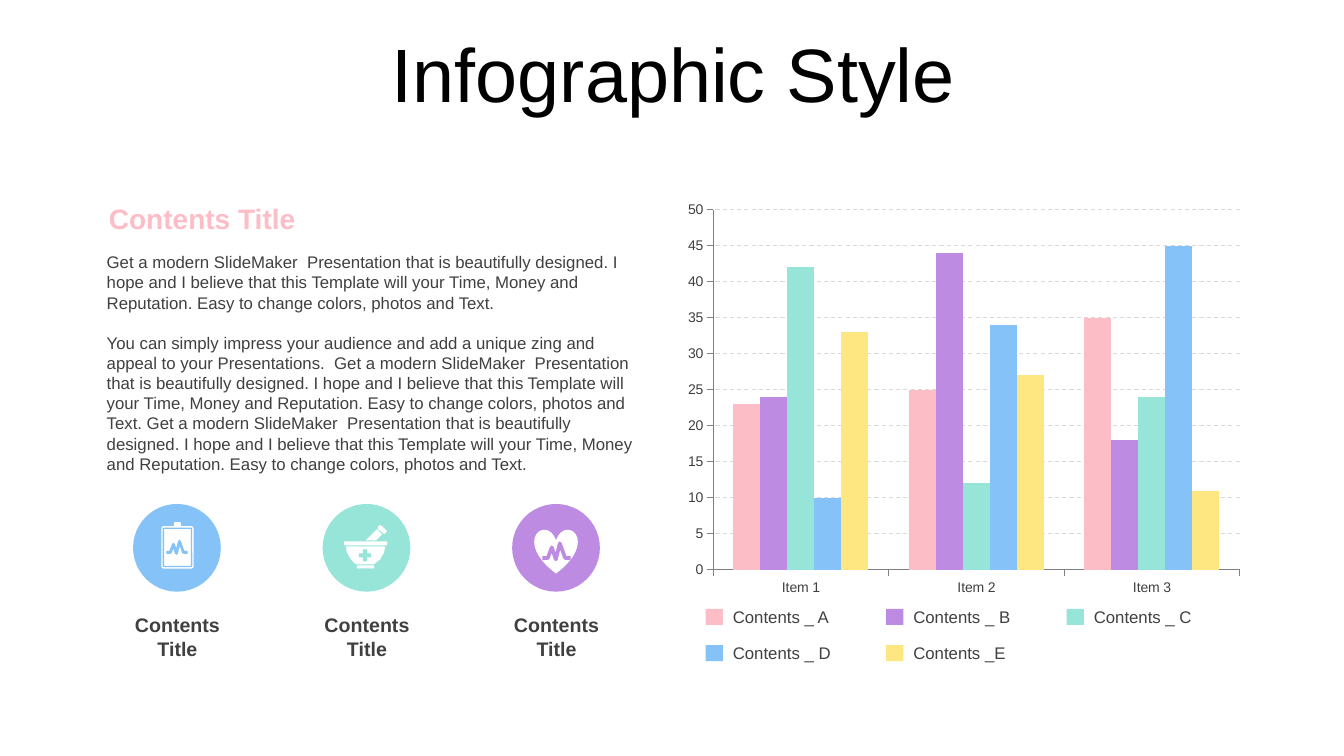
from pptx import Presentation
from pptx.chart.data import CategoryChartData
from pptx.dml.color import RGBColor
from pptx.enum.chart import XL_CHART_TYPE, XL_TICK_MARK
from pptx.enum.dml import MSO_LINE
from pptx.enum.shapes import MSO_SHAPE
from pptx.enum.text import MSO_ANCHOR, PP_ALIGN
from pptx.util import Inches, Pt

BLACK = RGBColor(0x00, 0x00, 0x00)
WHITE = RGBColor(0xFF, 0xFF, 0xFF)
DARK = RGBColor(0x40, 0x40, 0x40)
AXIS = RGBColor(0x80, 0x80, 0x80)
GRID = RGBColor(0xD9, 0xD9, 0xD9)
PINK = RGBColor(0xFD, 0xBD, 0xC7)
PURPLE = RGBColor(0xBE, 0x8B, 0xE2)
MINT = RGBColor(0x96, 0xE5, 0xD8)
BLUE = RGBColor(0x85, 0xC2, 0xF8)
YELLOW = RGBColor(0xFE, 0xE6, 0x80)

FONT = "Arial"
PITCH = ("Get a modern SlideMaker  Presentation that is beautifully designed. "
         "I hope and I believe that this Template will your Time, Money and "
         "Reputation. Easy to change colors, photos and Text.")
BODY = [PITCH,
        "You can simply impress your audience and add a unique zing and appeal "
        f"to your Presentations.  {PITCH} {PITCH}"]
SERIES = [  # legend label, colour, values
    ("Contents _ A", PINK, (23, 25, 35)),
    ("Contents _ B", PURPLE, (24, 44, 18)),
    ("Contents _ C", MINT, (42, 12, 24)),
    ("Contents _ D", BLUE, (10, 34, 45)),
    ("Contents _E", YELLOW, (33, 27, 11)),
]


def add_text(s, x, y, w, h, *paras, size=12, color=DARK, bold=False,
             align=PP_ALIGN.LEFT, anchor=MSO_ANCHOR.TOP, spacing=None,
             gap=0, inset=0.1):
    tf = s.shapes.add_textbox(Inches(x), Inches(y), Inches(w), Inches(h)).text_frame
    tf.word_wrap = True
    tf.vertical_anchor = anchor
    tf.margin_left = tf.margin_right = Inches(inset)
    for i, text in enumerate(paras):
        p = tf.add_paragraph() if i else tf.paragraphs[0]
        p.alignment = align
        if spacing:
            p.line_spacing = spacing
        if i and gap:
            p.space_before = Pt(gap)
        r = p.add_run()
        r.text = text
        f = r.font
        f.name, f.size, f.bold = FONT, Pt(size), bold
        f.color.rgb = color


def paint(sp, fill=None, line=None, width=1):
    sp.shadow.inherit = False
    if fill is None:
        sp.fill.background()
    else:
        sp.fill.solid()
        sp.fill.fore_color.rgb = fill
    if line is None:
        sp.line.fill.background()
    else:
        sp.line.color.rgb = line
        sp.line.width = Pt(width)


def add_preset(s, kind, x, y, w, h, fill=None, line=None, adj=None):
    sp = s.shapes.add_shape(kind, Inches(x), Inches(y), Inches(w), Inches(h))
    paint(sp, fill, line)
    if adj is not None:
        sp.adjustments[0] = adj


def add_outline(s, x, y, points, close=True, **style):
    pts = [(Inches(x + dx), Inches(y + dy)) for dx, dy in points]
    fb = s.shapes.build_freeform(*pts[0])
    fb.add_line_segments(pts[1:], close=close)
    paint(fb.convert_to_shape(), **style)


def add_pulse(s, x, y, color, scale=1):
    beat = [(0, .11), (.04, .11), (.07, .03), (.1, .12), (.13, 0),
            (.17, .11), (.21, .11)]
    add_outline(s, x, y, [(dx * scale, dy * scale) for dx, dy in beat],
                close=False, line=color, width=2 * scale)


# Icons, each placed from the corner of its disc
def clipboard_icon(s, x, y, color):
    rounded = MSO_SHAPE.ROUNDED_RECTANGLE
    add_preset(s, rounded, x + .28, y + .22, .32, .42, WHITE, adj=.07)
    add_preset(s, rounded, x + .3, y + .24, .28, .38, line=color, adj=.04)
    add_outline(s, x, y, [(.41, .18), (.47, .18), (.48, .23), (.4, .23)], fill=WHITE)
    add_pulse(s, x + .33, y + .37, color)


def mortar_icon(s, x, y, color):
    rounded = MSO_SHAPE.ROUNDED_RECTANGLE
    add_preset(s, rounded, x + .34, y + .61, .17, .03, WHITE, adj=.2)
    add_outline(s, x, y, [(.23, .42), (.62, .42), (.61, .48), (.57, .55), (.52, .59),
                          (.5, .6), (.34, .6), (.32, .59), (.28, .55), (.24, .48)],
                fill=WHITE)
    add_preset(s, rounded, x + .21, y + .37, .43, .04, WHITE, adj=.2)
    add_preset(s, MSO_SHAPE.CROSS, x + .36, y + .45, .12, .12, color, adj=.33)
    add_outline(s, x, y, [(.54, .25), (.59, .3), (.53, .36), (.43, .36)], fill=WHITE)
    add_outline(s, x, y, [(.57, .21), (.59, .22), (.63, .26), (.64, .27), (.61, .3),
                          (.6, .29), (.55, .25), (.55, .22)], fill=WHITE)


def heart_icon(s, x, y, color):
    add_preset(s, MSO_SHAPE.HEART, x + .22, y + .25, .43, .44, WHITE)
    add_pulse(s, x + .3, y + .39, color, scale=1.33)


def add_copy(s, x, y, w):
    add_text(s, x, y, w, .44, "Contents Title", size=20, color=PINK, bold=True,
             inset=.12)
    add_text(s, x, y + .5, w, 2.32, *BODY, spacing=Pt(14.4), gap=14.4)


def add_icon_row(s, x, y, step):
    icons = [(clipboard_icon, BLUE), (mortar_icon, MINT), (heart_icon, PURPLE)]
    for i, (draw, color) in enumerate(icons):
        left = x + i * step
        add_preset(s, MSO_SHAPE.OVAL, left, y, .87, .87, color)
        draw(s, left, y, color)
        add_text(s, left - .27, y + 1.03, 1.42, .57, "Contents Title", size=14,
                 bold=True, align=PP_ALIGN.CENTER, spacing=Pt(17.1), inset=.12)


def add_bar_chart(s, x, y, w, h):
    data = CategoryChartData()
    data.categories = ["Item 1", "Item 2", "Item 3"]
    for i, (_, _, values) in enumerate(SERIES, 1):
        data.add_series(f"Series {i}", values)
    chart = s.shapes.add_chart(XL_CHART_TYPE.COLUMN_CLUSTERED, Inches(x), Inches(y),
                               Inches(w), Inches(h), data).chart
    chart.has_legend = chart.has_title = False
    chart.font.name, chart.font.size = FONT, Pt(18)
    chart.font.color.rgb = BLACK
    plot = chart.plots[0]
    plot.gap_width, plot.overlap = 150, 0
    plot.vary_by_categories = False
    for series, (_, color, _) in zip(plot.series, SERIES):
        series.format.fill.solid()
        series.format.fill.fore_color.rgb = color
    for axis in (chart.category_axis, chart.value_axis):
        axis.major_tick_mark = XL_TICK_MARK.OUTSIDE
        axis.format.line.color.rgb = AXIS
        f = axis.tick_labels.font
        f.name, f.size = FONT, Pt(10)
        f.color.rgb = DARK
    axis = chart.value_axis
    axis.minimum_scale, axis.maximum_scale, axis.major_unit = 0, 50, 5
    axis.has_major_gridlines = True
    line = axis.major_gridlines.format.line
    line.color.rgb, line.width, line.dash_style = GRID, Pt(.75), MSO_LINE.DASH


def add_legend(s, x, y, columns=3):
    for i, (label, color, _) in enumerate(SERIES):
        row, col = divmod(i, columns)
        left, top = x + col * 1.79, y + row * .36
        add_preset(s, MSO_SHAPE.RECTANGLE, left, top + .07, .17, .16, color)
        add_text(s, left + .17, top, 1.36, .3, label, anchor=MSO_ANCHOR.MIDDLE)


def main():
    prs = Presentation()
    prs.slide_width, prs.slide_height = Inches(13.33), Inches(7.5)
    s = prs.slides.add_slide(prs.slide_layouts[6])
    add_text(s, .35, .31, 12.66, .92, "Infographic Style", size=54, color=BLACK,
             align=PP_ALIGN.CENTER, anchor=MSO_ANCHOR.MIDDLE, spacing=.9)
    add_bar_chart(s, 6.71, 1.92, 5.7, 4.07)
    add_legend(s, 7, 5.97)
    add_copy(s, .96, 1.95, 5.55)
    add_icon_row(s, 1.32, 5, 1.88)
    prs.save("out.pptx")


if __name__ == "__main__":
    main()
